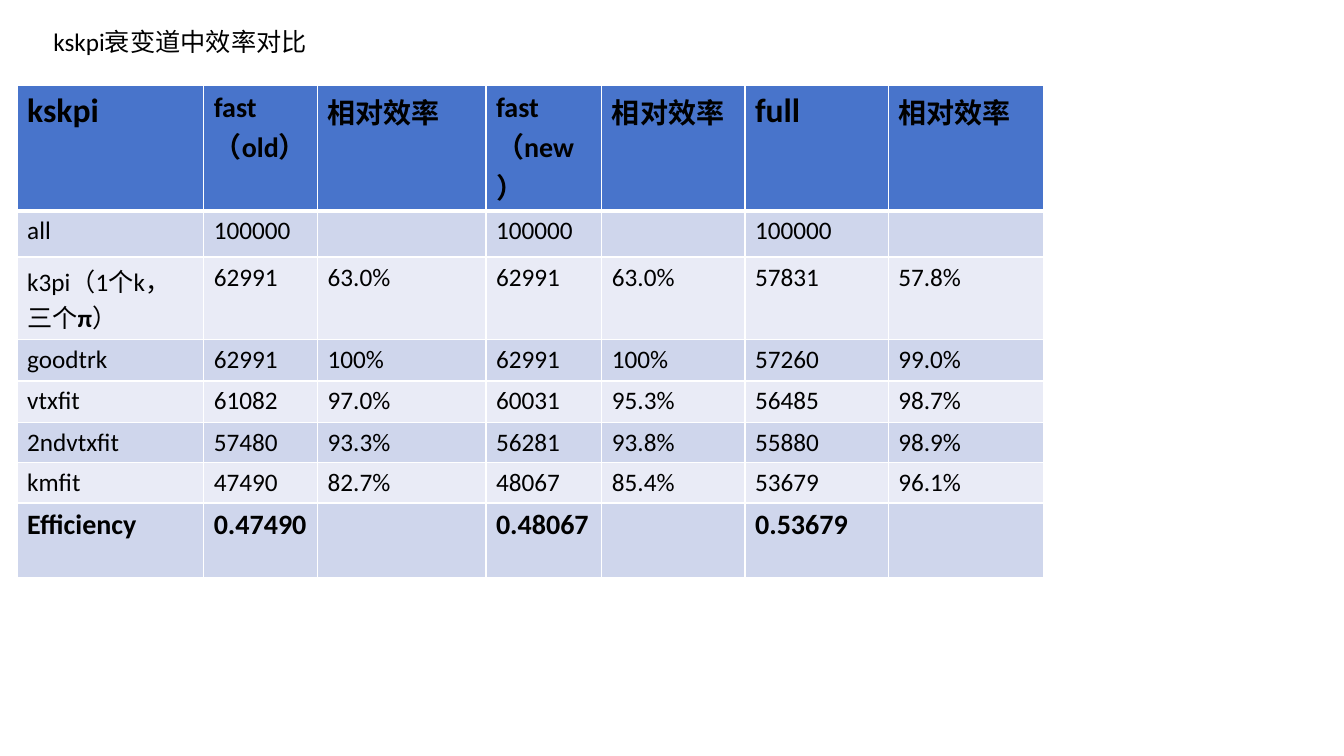
from dataclasses import dataclass

from lxml import etree
from pptx import Presentation
from pptx.dml.color import RGBColor
from pptx.enum.text import MSO_ANCHOR, MSO_AUTO_SIZE, PP_ALIGN
from pptx.oxml.ns import qn
from pptx.slide import Slide
from pptx.util import Pt

PX = 9144
FONT = "Calibri"
BLACK = RGBColor(0x00, 0x00, 0x00)
WHITE = RGBColor(0xFF, 0xFF, 0xFF)
HEADER_BLUE = RGBColor(0x48, 0x74, 0xCB)
BAND_DARK = RGBColor(0xCF, 0xD6, 0xEC)
BAND_LIGHT = RGBColor(0xE9, 0xEB, 0xF6)
LEFT = PP_ALIGN.LEFT
TOP = MSO_ANCHOR.TOP
FIT_SHAPE = MSO_AUTO_SIZE.SHAPE_TO_FIT_TEXT
COLUMN_WIDTHS = (185, 113, 167, 115, 142, 142, 154)
LARGE_HEADINGS = ("kskpi", "full")


@dataclass(frozen=True)
class TableRow:
    height: int
    texts: tuple[str, ...]
    size: int = 18
    bold: bool = False


ROWS = (
    TableRow(124, ("kskpi", "fast（old）", "相对效率", "fast（new）", "相对效率",
                   "full", "相对效率"), 20, True),
    TableRow(46, ("all", "100000", "", "100000", "", "100000", "")),
    TableRow(82, ("k3pi（1个k，三个π）", "62991", "63.0%", "62991", "63.0%",
                  "57831", "57.8%")),
    TableRow(41, ("goodtrk", "62991", "100%", "62991", "100%", "57260", "99.0%")),
    TableRow(41, ("vtxfit", "61082", "97.0%", "60031", "95.3%", "56485", "98.7%")),
    TableRow(40, ("2ndvtxfit", "57480", "93.3%", "56281", "93.8%", "55880", "98.9%")),
    TableRow(40, ("kmfit", "47490", "82.7%", "48067", "85.4%", "53679", "96.1%")),
    TableRow(74, ("Efficiency", "0.47490", "", "0.48067", "", "0.53679", ""), 20, True),
)


def format_run(r, size: int, bold: bool) -> None:
    r.font.name = FONT
    r.font.size = Pt(size)
    r.font.bold = bold
    r.font.color.rgb = BLACK


def set_borders(cell, row_index: int) -> None:
    widths = {
        "L": 1,
        "R": 1,
        "T": 3 if row_index == 1 else 1,
        "B": 3 if row_index == 0 else 1,
    }
    properties = cell._tc.get_or_add_tcPr()
    for side, width in widths.items():
        line = etree.SubElement(properties, qn(f"a:ln{side}"), w=str(Pt(width)))
        fill = etree.SubElement(line, qn("a:solidFill"))
        etree.SubElement(fill, qn("a:srgbClr"), val=str(WHITE))


def add_title(s: Slide, text: str) -> None:
    sp = s.shapes.title
    sp.left, sp.top, sp.width, sp.height = (v * PX for v in (43, 21, 444, 40))
    tf = sp.text_frame
    tf.text = text
    tf.word_wrap = True
    tf.auto_size = FIT_SHAPE
    tf.vertical_anchor = TOP
    p = tf.paragraphs[0]
    p.alignment = LEFT
    format_run(p.runs[0], 18, False)


def add_efficiency_table(s: Slide) -> None:
    height = sum(row.height for row in ROWS)
    table = s.shapes.add_table(
        len(ROWS), len(COLUMN_WIDTHS), 17 * PX, 85 * PX,
        sum(COLUMN_WIDTHS) * PX, height * PX,
    ).table
    for column, width in zip(table.columns, COLUMN_WIDTHS):
        column.width = width * PX
    for i, row in enumerate(ROWS):
        table.rows[i].height = row.height * PX
        band = BAND_DARK if i % 2 else BAND_LIGHT
        for j, text in enumerate(row.texts):
            cell = table.cell(i, j)
            set_borders(cell, i)
            cell.fill.solid()
            cell.fill.fore_color.rgb = band if i else HEADER_BLUE
            size = 24 if text in LARGE_HEADINGS else row.size
            p = cell.text_frame.paragraphs[0]
            for part in filter(None, text.partition("π")):
                r = p.add_run()
                r.text = part
                format_run(r, size, row.bold or part == "π")


def main() -> None:
    prs = Presentation()
    prs.slide_width = 1333 * PX
    prs.slide_height = 750 * PX
    s = prs.slides.add_slide(prs.slide_layouts[5])
    add_efficiency_table(s)
    add_title(s, "kskpi衰变道中效率对比")
    prs.save("out.pptx")


if __name__ == "__main__":
    main()
